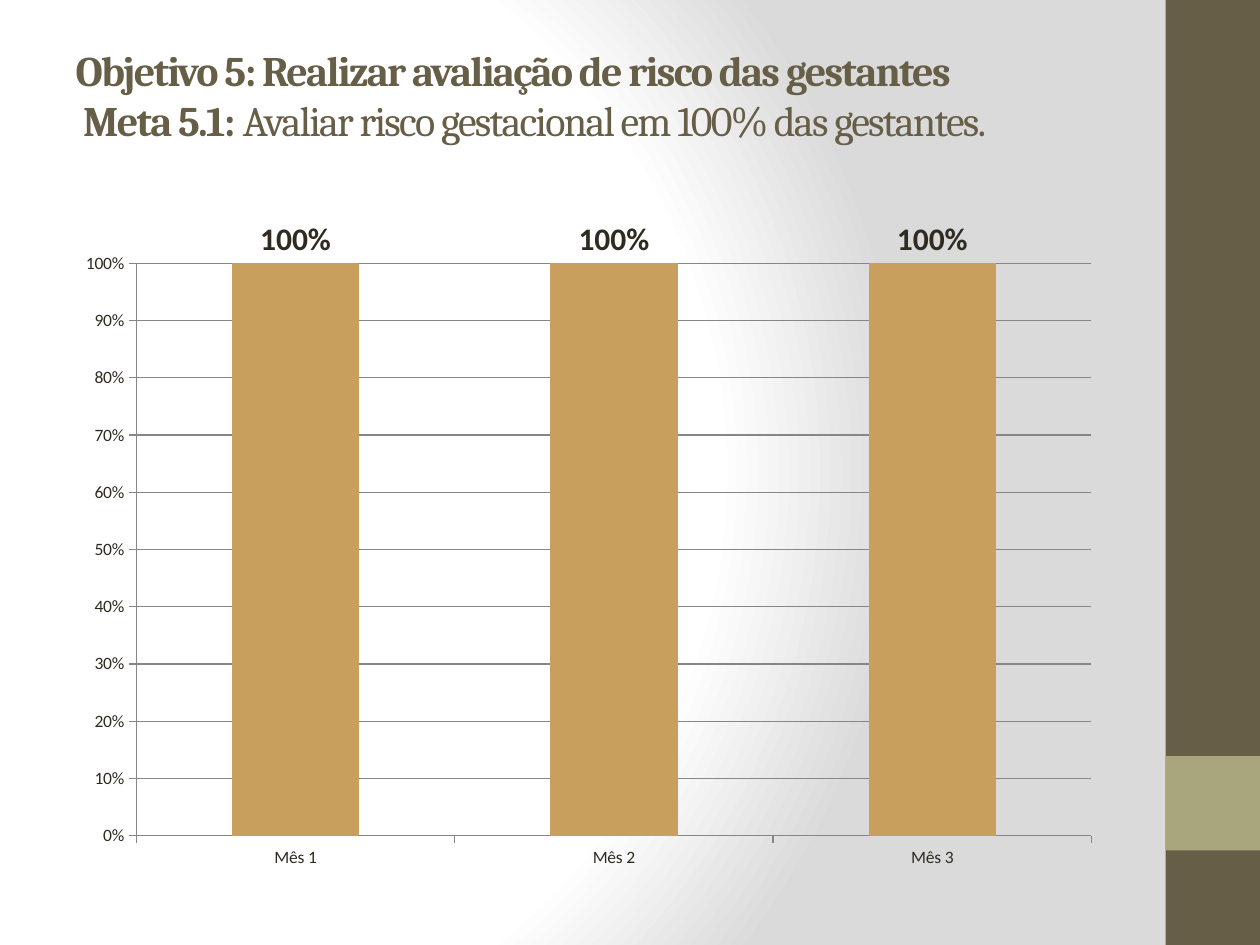
from lxml import etree
from pptx import Presentation
from pptx.chart.data import CategoryChartData
from pptx.dml.color import RGBColor
from pptx.enum.chart import XL_CHART_TYPE, XL_LABEL_POSITION, XL_TICK_MARK
from pptx.enum.shapes import MSO_SHAPE
from pptx.enum.text import MSO_ANCHOR, MSO_AUTO_SIZE, PP_ALIGN
from pptx.oxml import parse_xml
from pptx.oxml.ns import nsdecls, qn
from pptx.util import Inches, Pt

RECTANGLE = MSO_SHAPE.RECTANGLE
COLUMN_CLUSTERED = XL_CHART_TYPE.COLUMN_CLUSTERED
OUTSIDE_END = XL_LABEL_POSITION.OUTSIDE_END
TICK_OUT = XL_TICK_MARK.OUTSIDE
TOP, LEFT = MSO_ANCHOR.TOP, PP_ALIGN.LEFT

BROWN = RGBColor(0x67, 0x5E, 0x47)
SAGE = RGBColor(0xA9, 0xA5, 0x7C)
TAN = RGBColor(0xC8, 0x9F, 0x5D)
DARK = RGBColor(0x2F, 0x2B, 0x20)
GRAY = RGBColor(0x86, 0x86, 0x86)
WHITE = RGBColor(0xFF, 0xFF, 0xFF)
LIGHT_GRAY = RGBColor(0xDA, 0xDA, 0xDA)


def set_background(slide):
    """Fill the background with a circular white to gray gradient."""
    slide.background.fill.gradient()
    gradient = slide.element.find(".//" + qn("a:gradFill"))
    stops = "".join(
        f'<a:gs pos="{percent * 1000}"><a:srgbClr val="{color}"/></a:gs>'
        for percent, color in ((0, WHITE), (75, WHITE), (100, LIGHT_GRAY))
    )
    gradient.getparent().replace(gradient, parse_xml(
        f'<a:gradFill {nsdecls("a")} rotWithShape="1"><a:gsLst>{stops}</a:gsLst>'
        '<a:path path="circle">'
        '<a:fillToRect l="20000" t="50000" r="100000" b="50000"/>'
        '</a:path></a:gradFill>'
    ))


def add_block(slide, top, height, color):
    """Add one block of the right-hand band."""
    shape = slide.shapes.add_shape(
        RECTANGLE, Inches(9.25), Inches(top), Inches(0.75), Inches(height))
    shape.shadow.inherit = False
    shape.fill.solid()
    shape.fill.fore_color.rgb = color
    shape.line.fill.background()


def format_font(font, size, color, name="Calibri", bold=False):
    font.size = Pt(size)
    font.name = name
    font.bold = bold
    font.color.rgb = color


def add_text(paragraph, text, spacing=0, **font_format):
    """Add a run; spacing is the letter spacing in points."""
    run = paragraph.add_run()
    run.text = text
    format_font(run.font, **font_format)
    run.font._element.set("spc", str(spacing * 100))


def add_title(slide):
    title = slide.shapes.title
    title.left, title.top = Inches(0.5), Inches(0.3)
    title.width, title.height = Inches(8.33), Inches(1.25)
    frame = title.text_frame
    frame.word_wrap = True
    frame.auto_size = MSO_AUTO_SIZE.NONE
    frame.vertical_anchor = TOP
    paragraph = frame.paragraphs[0]
    paragraph.alignment = LEFT
    style = dict(size=24, color=BROWN, name="Cambria", spacing=-1)
    add_text(paragraph, "Objetivo 5: Realizar avaliação de risco das gestantes",
             bold=True, **style)
    paragraph.add_line_break()
    add_text(paragraph, " Meta 5.1: ", bold=True, **style)
    add_text(paragraph, "Avaliar risco gestacional em 100% das gestantes.", **style)


def set_plot_layout(chart, **fractions):
    """Place the inner plot area, in fractions of the chart."""
    plot_area = chart.element.find(".//" + qn("c:plotArea"))
    for old_layout in plot_area.findall(qn("c:layout")):
        plot_area.remove(old_layout)
    layout = etree.Element(qn("c:layout"))
    manual = etree.SubElement(layout, qn("c:manualLayout"))
    settings = dict(layoutTarget="inner", xMode="edge", yMode="edge", **fractions)
    for tag, value in settings.items():
        etree.SubElement(manual, qn("c:" + tag)).set("val", str(value))
    plot_area.insert(0, layout)


def add_risk_chart(slide):
    data = CategoryChartData(number_format="0%")
    data.categories = [f"Mês {month}" for month in (1, 2, 3)]
    data.add_series("Series 1", (1, 1, 1))
    chart = slide.shapes.add_chart(
        COLUMN_CLUSTERED, Inches(0.5), Inches(1.75),
        Inches(8.33), Inches(5.25), data).chart
    chart.has_legend = False
    chart.has_title = False
    format_font(chart.font, 10, DARK)
    set_plot_layout(chart, x=0.07, y=0.06, w=0.91, h=0.87)

    # Axes
    for axis in (chart.category_axis, chart.value_axis):
        axis.major_tick_mark = TICK_OUT
        axis.format.line.color.rgb = GRAY
        axis.format.line.width = Pt(0.75)
    value_axis = chart.value_axis
    value_axis.minimum_scale, value_axis.maximum_scale = 0, 1
    value_axis.major_unit = 0.1
    value_axis.tick_labels.number_format = "0%"
    value_axis.tick_labels.number_format_is_linked = False
    value_axis.has_major_gridlines = True
    gridline = value_axis.major_gridlines.format.line
    gridline.color.rgb = GRAY
    gridline.width = Pt(0.75)

    # Columns and labels
    plot = chart.plots[0]
    plot.gap_width = 150
    plot.vary_by_categories = False
    column_fill = plot.series[0].format.fill
    column_fill.solid()
    column_fill.fore_color.rgb = TAN
    labels = plot.series[0].data_labels
    labels.show_value = True
    labels.number_format = "0%"
    labels.number_format_is_linked = False
    labels.position = OUTSIDE_END
    format_font(labels.font, 18, DARK, bold=True)


def main():
    presentation = Presentation()
    presentation.slide_width = Inches(10)
    presentation.slide_height = Inches(7.5)
    slide = presentation.slides.add_slide(presentation.slide_layouts[5])
    set_background(slide)
    add_block(slide, 0, 7.5, BROWN)
    add_block(slide, 6, 0.75, SAGE)
    add_title(slide)
    add_risk_chart(slide)
    presentation.save("out.pptx")


if __name__ == "__main__":
    main()
